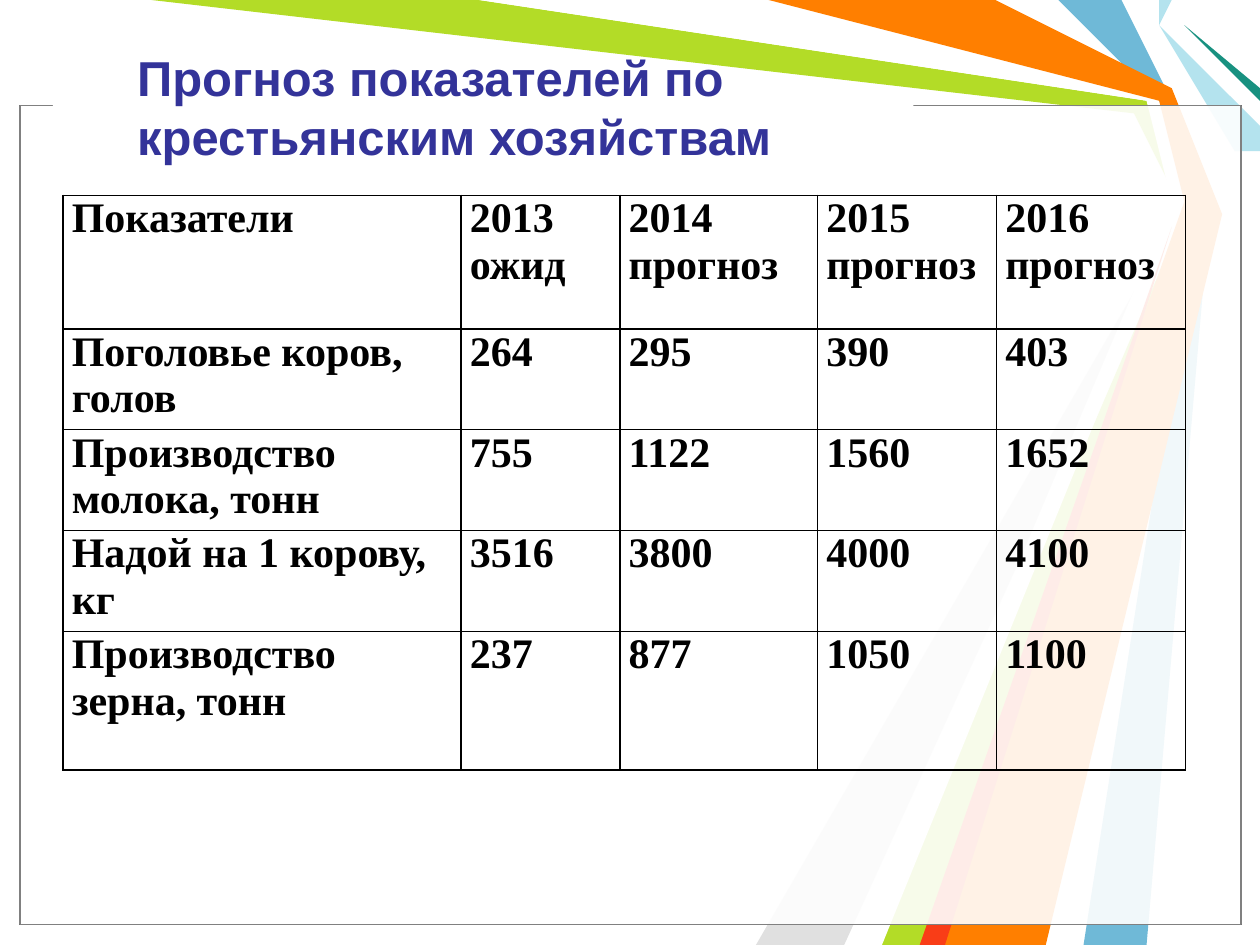
from dataclasses import dataclass

from lxml.etree import SubElement as Sub
from pptx import Presentation
from pptx.dml.color import RGBColor as Rgb
from pptx.enum.shapes import MSO_SHAPE as Kind
from pptx.enum.text import MSO_ANCHOR as Anchor
from pptx.oxml.ns import qn
from pptx.util import Inches, Pt

COLS, ROWS = 100, 75


@dataclass(frozen=True)
class Theme:
    white: str = "FFFFFF"
    black: str = "000000"
    gray: str = "808080"
    silver: str = "E0E0E0"
    navy: str = "333399"
    blue: str = "6FB9D7"
    pale: str = "B4E3EE"
    teal: str = "189180"
    lime: str = "B3DC27"
    orange: str = "FF7F00"
    red: str = "F93D17"
    head: str = "Arial"
    body: str = "Times New Roman"
    head_pt: float = 28
    body_pt: float = 24
    rule_pt: float = 1
    edge_pt: float = 0.75


class Board:
    """Draws on one slide; lengths are columns and rows of the grid."""

    def __init__(self, deck, theme):
        self.theme = theme
        self.slide = deck.slides.add_slide(deck.slide_layouts[6])
        self.shapes = self.slide.shapes
        self.unit_x = deck.slide_width / COLS
        self.unit_y = deck.slide_height / ROWS

    def box(self, x, y, w, h):
        return (round(x * self.unit_x), round(y * self.unit_y),
                round(w * self.unit_x), round(h * self.unit_y))

    def paint(self, shape, fill, line=None):
        shape.shadow.inherit = False
        shape.fill.solid()
        shape.fill.fore_color.rgb = Rgb.from_string(fill)
        if line:
            shape.line.color.rgb = Rgb.from_string(line)
            shape.line.width = Pt(self.theme.edge_pt)
        else:
            shape.line.fill.background()

    def ribbon(self, fill, *points):
        pen = self.shapes.build_freeform(*points[0], scale=(self.unit_x, self.unit_y))
        pen.add_line_segments(points[1:], close=True)
        self.paint(pen.convert_to_shape(), fill)

    def panel(self, area, fill, line=None, alpha=100):
        shape = self.shapes.add_shape(Kind.RECTANGLE, *self.box(*area))
        self.paint(shape, fill, line)
        if alpha < 100:
            color = shape.fill._xPr.find(qn("a:solidFill"))[0]
            Sub(color, qn("a:alpha"), val=str(alpha * 1000))

    def text(self, frame, lines, font, size, color):
        for i, line in enumerate(lines):
            para = frame.paragraphs[0] if i == 0 else frame.add_paragraph()
            run = para.add_run()
            run.text = line
            run.font.name, run.font.size, run.font.bold = font, Pt(size), True
            run.font.color.rgb = Rgb.from_string(color)

    def title(self, area, words):
        look = self.theme
        frame = self.shapes.add_textbox(*self.box(*area)).text_frame
        frame.word_wrap = True
        frame.vertical_anchor = Anchor.MIDDLE
        self.text(frame, [words], look.head, look.head_pt, look.navy)

    def border(self, cell):
        props = cell._tc.get_or_add_tcPr()
        for side in ("a:lnL", "a:lnR", "a:lnT", "a:lnB"):
            line = Sub(props, qn(side), w=str(Pt(self.theme.rule_pt)))
            fill = Sub(line, qn("a:solidFill"))
            Sub(fill, qn("a:srgbClr"), val=self.theme.black)

    def table(self, x, y, widths, heights, data):
        look = self.theme
        area = self.box(x, y, sum(widths), sum(heights))
        grid = self.shapes.add_table(len(heights), len(widths), *area).table
        grid.first_row = grid.horz_banding = False
        for col, width in zip(grid.columns, widths):
            col.width = round(width * self.unit_x)
        for row, height, texts in zip(grid.rows, heights, data):
            row.height = round(height * self.unit_y)
            for cell, words in zip(row.cells, texts):
                self.border(cell)
                cell.fill.background()
                cell.margin_left = cell.margin_right = Inches(0.07)
                cell.margin_top = cell.margin_bottom = 0
                self.text(cell.text_frame, words.split("\n"),
                          look.body, look.body_pt, look.black)


def main():
    deck = Presentation()
    deck.slide_width, deck.slide_height = Inches(10), Inches(7.5)
    look = Theme()
    board = Board(deck, look)

    board.ribbon(look.blue, (89.2, 0), (92.9, 7.7), (95.8, 16.7), (91.1, 74.9),
                 (85.6, 74.9), (95, 16.7), (91.7, 7.5), (83.8, 0))
    board.ribbon(look.lime, (11.7, 0), (38.3, 0), (91.4, 7.8), (94.2, 16.9),
                 (74.2, 75), (69.2, 75), (93.5, 17.3), (90.1, 9.1))
    board.ribbon(look.silver, (66.7, 75), (92.7, 18.1), (60, 75))
    board.ribbon(look.white, (37.5, 0), (91, 8.2), (93.2, 16.2), (67.5, 75),
                 (70, 75), (94.1, 15.8), (91.7, 7.5), (60, 0))
    board.ribbon(look.pale, (92.5, 0), (91.7, 1.7), (97.8, 12), (100, 12.5),
                 (100, 10), (92.5, 1.7), (93.2, 0))
    board.ribbon(look.teal, (100, 8.3), (94.2, 2.5), (100, 6.7))
    board.ribbon(look.orange, (60.8, 0), (79.2, 0), (93, 7), (96.6, 16.9),
                 (83.3, 75), (73.3, 75), (94.2, 15.8), (91.7, 7.5))
    board.ribbon(look.red, (73.2, 75), (93.2, 18.3), (74.9, 75))

    for edge in (look.black, look.gray):
        board.panel((1.6, 8.4, 96.9, 65), look.white, edge, alpha=69)
    board.panel((4.2, 7.4, 68.3, 1.7), look.white)

    board.title((9.9, 2.2, 68.9, 12.5),
                "Прогноз показателей по крестьянским хозяйствам")
    board.table(5, 15.5, (31.6, 12.6, 15.7, 14.2, 15), (10.6, 7.4, 7.6, 7.4, 11), (
        ("Показатели", "2013\nожид", "2014 прогноз", "2015 прогноз", "2016 прогноз"),
        ("Поголовье коров, голов", "264", "295", "390", "403"),
        ("Производство молока, тонн", "755", "1122", "1560", "1652"),
        ("Надой на 1 корову, кг", "3516", "3800", "4000", "4100"),
        ("Производство зерна, тонн", "237", "877", "1050", "1100"),
    ))
    deck.save("out.pptx")


if __name__ == "__main__":
    main()
